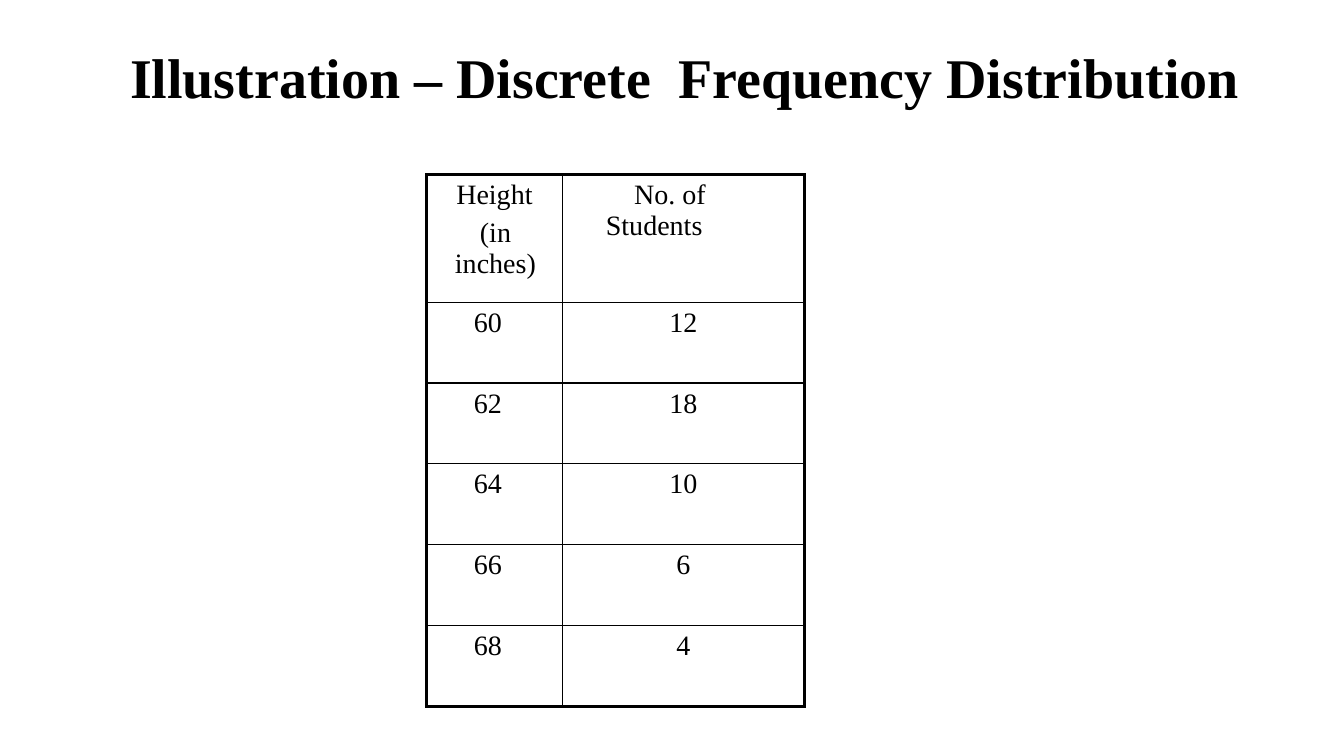
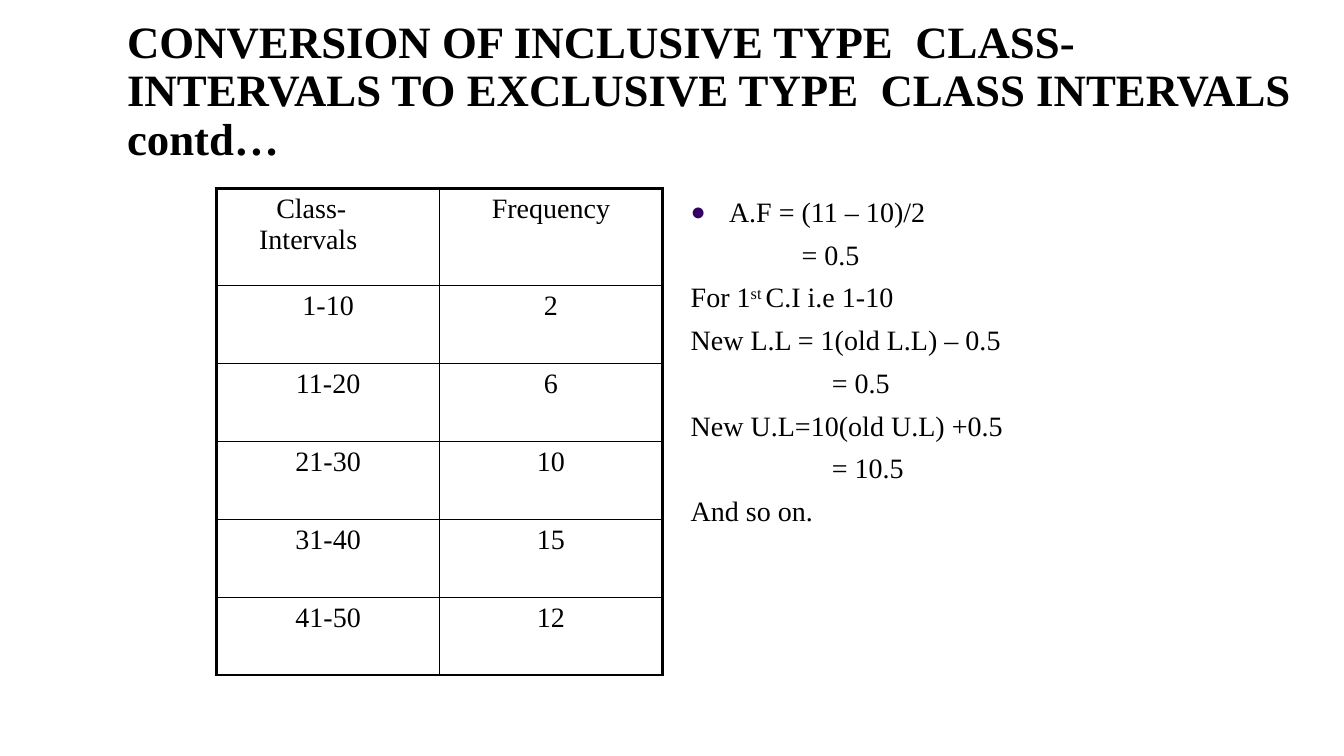
import pptx
import pptx.dml.color
import pptx.enum.text
import pptx.oxml
import pptx.oxml.ns
import pptx.util
import lxml.etree

Inches, Pt = pptx.util.Inches, pptx.util.Pt
Align, Anchor = pptx.enum.text.PP_ALIGN, pptx.enum.text.MSO_ANCHOR
qn = pptx.oxml.ns.qn

# Shared style
BLACK = pptx.dml.color.RGBColor(0x00, 0x00, 0x00)
WHITE = pptx.dml.color.RGBColor(0xFF, 0xFF, 0xFF)
PURPLE = pptx.dml.color.RGBColor(0x33, 0x00, 0x66)
FONT = "Times New Roman"
WIDE, HIGH = Inches(13.33), Inches(7.5)
THICK, THIN = Pt(2.25), Pt(1)


def place(left, top, width, height):
    """Turn percentages of the slide into lengths."""
    return [int(share * side / 100) for share, side in
            zip((left, top, width, height), (WIDE, HIGH) * 2)]


def write(frame, text, size=20, bold=False, align=Align.LEFT, left=0,
          first=0, right=0, before=0, line=None, dot=False):
    """Add one paragraph; parts between ^ signs are superscript."""
    para = frame.paragraphs[0]
    if para.runs:
        para = frame.add_paragraph()
    para.alignment = align
    para.space_before = Pt(before)
    if line:
        para.line_spacing = Pt(line)
    props = para._p.get_or_add_pPr()
    for name, value in (("marL", left), ("marR", right), ("indent", first)):
        props.set(name, str(Inches(value)))
    if dot:
        add_dot(props)
    for index, part in enumerate(text.split("^")):
        run = para.add_run()
        run.text = part
        font = run.font
        font.name, font.size, font.bold = FONT, Pt(size), bold
        font.color.rgb = BLACK
        if index % 2:
            run._r.get_or_add_rPr().set("baseline", "30000")


def add_dot(props):
    """Give a paragraph a round purple bullet."""
    color = lxml.etree.SubElement(props, qn("a:buClr"))
    lxml.etree.SubElement(color, qn("a:srgbClr"), val=str(PURPLE))
    lxml.etree.SubElement(props, qn("a:buSzPct"), val="90000")
    lxml.etree.SubElement(props, qn("a:buFont"), typeface="Arial")
    lxml.etree.SubElement(props, qn("a:buChar"), char="●")


def add_box(slide, area, top=0, anchor=Anchor.TOP):
    frame = slide.shapes.add_textbox(*place(*area)).text_frame
    frame.word_wrap = True
    frame.vertical_anchor = anchor
    frame.margin_left = frame.margin_right = frame.margin_bottom = 0
    frame.margin_top = Inches(top)
    return frame


def add_title(slide, text, area, size):
    frame = add_box(slide, area, 0.01, Anchor.MIDDLE)
    write(frame, text, size=size, bold=True, line=size * 1.08)


def set_edges(cell, **edges):
    """Draw the cell's borders; edges are L, R, T and B widths."""
    props = cell._tc.get_or_add_tcPr()
    for index, (side, width) in enumerate(edges.items()):
        edge = lxml.etree.Element(qn("a:ln" + side), w=str(width))
        fill = lxml.etree.SubElement(edge, qn("a:solidFill"))
        lxml.etree.SubElement(fill, qn("a:srgbClr"), val=str(BLACK))
        props.insert(index, edge)


def add_grid(slide, area, shares, head, rows):
    """Add a table; a cell is a list of (text, format) paragraphs."""
    left, top, width, height = place(*area)
    last, end = len(rows) - 1, len(shares) - 1
    grid = slide.shapes.add_table(len(rows), len(shares),
                                  left, top, width, height).table
    grid.first_row = grid.horz_banding = False
    for column, share in zip(grid.columns, shares):
        column.width = int(width * share)
    for r, row in enumerate(rows):
        share = (1 - head) / last if r else head
        grid.rows[r].height = int(height * share)
        for c, paras in enumerate(row):
            cell = grid.cell(r, c)
            cell.fill.solid()
            cell.fill.fore_color.rgb = WHITE
            cell.margin_left = cell.margin_right = cell.margin_bottom = 0
            cell.margin_top = Inches(0.05)
            set_edges(cell, L=THIN if c else THICK,
                      R=THICK if c == end else THIN,
                      T=THIN if r else THICK,
                      B=THICK if r == last else THIN)
            for text, style in paras:
                write(cell.text_frame, text, **style)


def add_discrete(slide):
    add_title(slide, "Illustration – Discrete  Frequency Distribution",
              (9.68, 6.27, 90.3, 8.27), 40)
    mid = dict(align=Align.CENTER)
    rows = [[[("Height", mid),
              ("(in inches)", dict(mid, left=0.23, right=0.21, before=5))],
             [("No. of Students", dict(left=0.43, first=0.28, right=0.6))]]]
    data = {"60": "12", "62": "18", "64": "10", "66": "6", "68": "4"}
    rows += [[[(inch, dict(left=0.47))], [(count, mid)]]
             for inch, count in data.items()]
    add_grid(slide, (31.73, 23.07, 28.13, 70.4), (0.36, 0.64), 0.24, rows)


def add_classes(slide):
    add_title(slide, "CONVERSION OF INCLUSIVE TYPE  CLASS-INTERVALS TO "
              "EXCLUSIVE TYPE  CLASS INTERVALS contd…",
              (9.45, 2.27, 87.77, 19.6), 32)
    # Frequency table
    mid = dict(align=Align.CENTER)
    rows = [[[("Class- Intervals", dict(left=0.42, first=0.17, right=0.6))],
             [("Frequency", mid)]]]
    data = {"1-10": "2", "11-20": "6", "21-30": "10",
            "31-40": "15", "41-50": "12"}
    rows += [[[(text, mid)] for text in pair] for pair in data.items()]
    add_grid(slide, (16.13, 24.93, 33.16, 64.4), (0.5, 0.5), 0.2, rows)
    # Worked steps
    frame = add_box(slide, (51.09, 24.4, 44.11, 46.13), 0.1)
    write(frame, "A.F = (11 – 10)/2", left=0.42, first=-0.38, line=24,
          dot=True)
    for text, left in (("= 0.5", 1.14),
                       ("For 1^st ^C.I i.e 1-10", 0.04),
                       ("New L.L = 1(old L.L) – 0.5", 0.04),
                       ("= 0.5", 1.44),
                       ("New U.L=10(old U.L) +0.5", 0.04),
                       ("= 10.5", 1.44),
                       ("And so on.", 0.04)):
        write(frame, text, left=left, before=6.5, line=24)


def main():
    deck = pptx.Presentation()
    deck.slide_width, deck.slide_height = WIDE, HIGH
    for build in (add_discrete, add_classes):
        build(deck.slides.add_slide(deck.slide_layouts[6]))
    deck.save("out.pptx")


if __name__ == "__main__":
    main()
